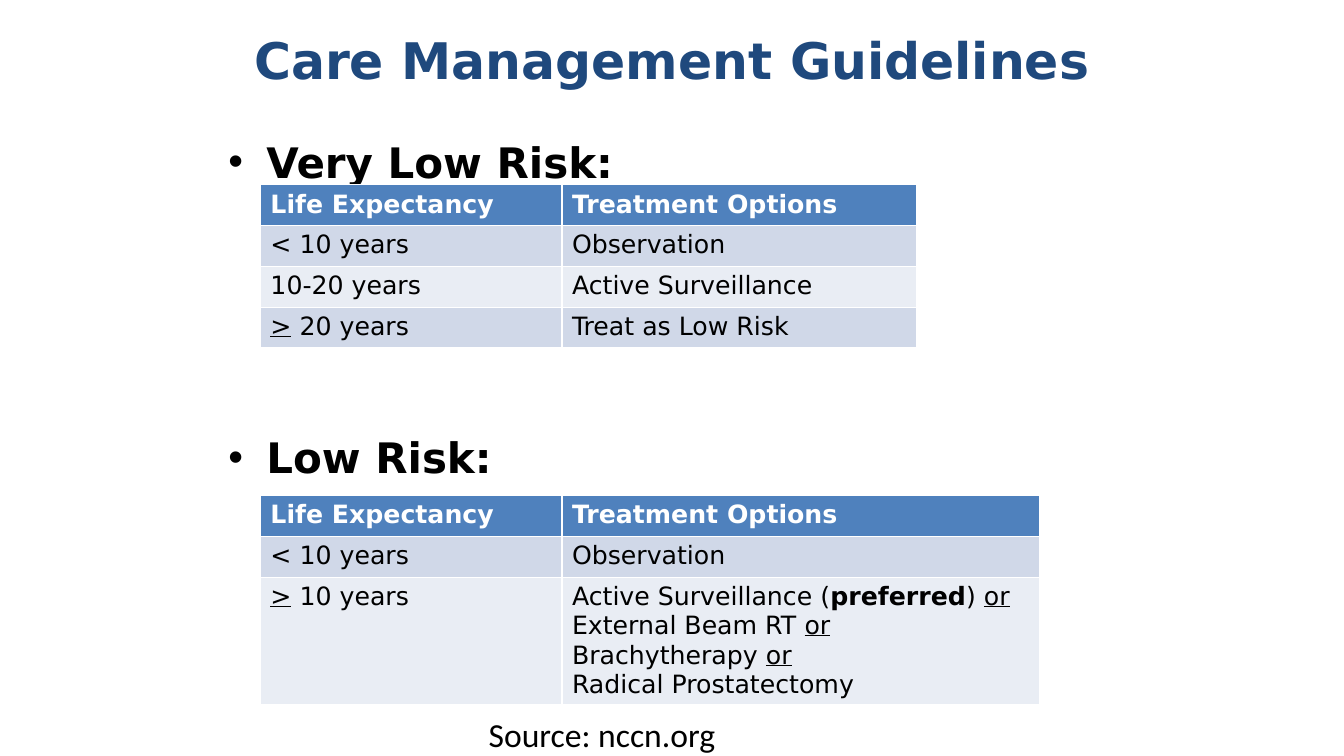
"""Build the care management guidelines slide with its two risk tables."""
from dataclasses import dataclass

from pptx import Presentation
from pptx.dml.color import RGBColor as Color
from pptx.enum.text import MSO_ANCHOR as Anchor, MSO_AUTO_SIZE as AutoSize, PP_ALIGN as Align
from pptx.util import Inches, Pt


@dataclass(frozen=True)
class Theme:
    face: str = "DejaVu Sans"
    source_face: str = "Calibri"
    title_color: str = "1F497D"
    text_color: str = "000000"
    header_color: str = "FFFFFF"
    header_fill: str = "4F81BD"
    band_fills: tuple = ("D0D8E8", "E9EDF4")
    title_size: int = 36
    heading_size: int = 30
    table_size: int = 18
    source_size: int = 24


theme = Theme()
deck = Presentation()
deck.slide_width, deck.slide_height = Inches(13.33), Inches(7.5)
COLUMN, ROW = deck.slide_width / 160, deck.slide_height / 90


def area(left, top, width, height):
    return int(left * COLUMN), int(top * ROW), int(width * COLUMN), int(height * ROW)


def write(para, text, size=theme.table_size, color=theme.text_color,
          face=theme.face, bold=False, underline=False):
    span = para.add_run()
    span.text = text
    font = span.font
    font.size, font.name = Pt(size), face
    font.bold, font.underline = bold, underline
    font.color.rgb = Color.from_string(color)


page = deck.slides.add_slide(deck.slide_layouts[1])
title, body = page.placeholders

title.left, title.top, title.width, title.height = area(20, 0.1, 120, 13.9)
title.text_frame.vertical_anchor = Anchor.MIDDLE
title.text_frame.paragraphs[0].alignment = Align.CENTER
write(title.text_frame.paragraphs[0], "Care Management Guidelines",
      size=theme.title_size, color=theme.title_color, bold=True)

body.left, body.top, body.width, body.height = area(26, 15, 111.2, 78)
frame = body.text_frame
frame.auto_size = AutoSize.NONE
frame.margin_top = Inches(0.1)
first, second = frame.paragraphs[0], frame.add_paragraph()
for para, heading, gap in ((first, "Very Low Risk:", 0), (second, "Low Risk:", 175)):
    para.space_before = Pt(gap)
    write(para, heading, size=theme.heading_size, bold=True)

PLAIN, BOLD, UNDERLINED = {}, {"bold": True}, {"underline": True}
OR = ("or", UNDERLINED)
HEADER = ("Life Expectancy", "Treatment Options")
LINE_ROW, OPTIONS_ROW = 4.86, 15.16
OPTIONS = [
    [("Active Surveillance (", PLAIN), ("preferred", BOLD), (") ", PLAIN), OR],
    [("External Beam RT ", PLAIN), OR],
    [("Brachytherapy ", PLAIN), OR],
    [("Radical Prostatectomy", PLAIN)],
]
tables = [
    (22, (35.9, 42.2), [LINE_ROW] * 4, [
        HEADER,
        ("< 10 years", "Observation"),
        ("10-20 years", "Active Surveillance"),
        ([[(">", UNDERLINED), (" 20 years", PLAIN)]], "Treat as Low Risk"),
    ]),
    (59, (35.9, 56.9), [LINE_ROW, LINE_ROW, OPTIONS_ROW], [
        HEADER,
        ("< 10 years", "Observation"),
        ([[(">", UNDERLINED), (" 10 years", PLAIN)]], OPTIONS),
    ]),
]

for top, widths, heights, rows in tables:
    table = page.shapes.add_table(
        len(rows), len(widths), *area(31, top, sum(widths), sum(heights))).table
    for column, width in zip(table.columns, widths):
        column.width = int(width * COLUMN)
    for row_index, (row, height, contents) in enumerate(zip(table.rows, heights, rows)):
        row.height = int(height * ROW)
        is_header = row_index == 0
        fill = theme.header_fill if is_header else theme.band_fills[(row_index - 1) % 2]
        look = {"color": theme.header_color, "bold": True} if is_header else {}
        for cell, content in zip(row.cells, contents):
            cell.fill.solid()
            cell.fill.fore_color.rgb = Color.from_string(fill)
            lines = [[(content, PLAIN)]] if isinstance(content, str) else content
            for line_index, line in enumerate(lines):
                frame = cell.text_frame
                para = frame.add_paragraph() if line_index else frame.paragraphs[0]
                for text, style in line:
                    write(para, text, **look, **style)

source = page.shapes.add_textbox(*area(57, 84.4, 31.2, 6))
source.text_frame.word_wrap = True
write(source.text_frame.paragraphs[0], "Source: nccn.org",
      size=theme.source_size, face=theme.source_face)

deck.save("out.pptx")
